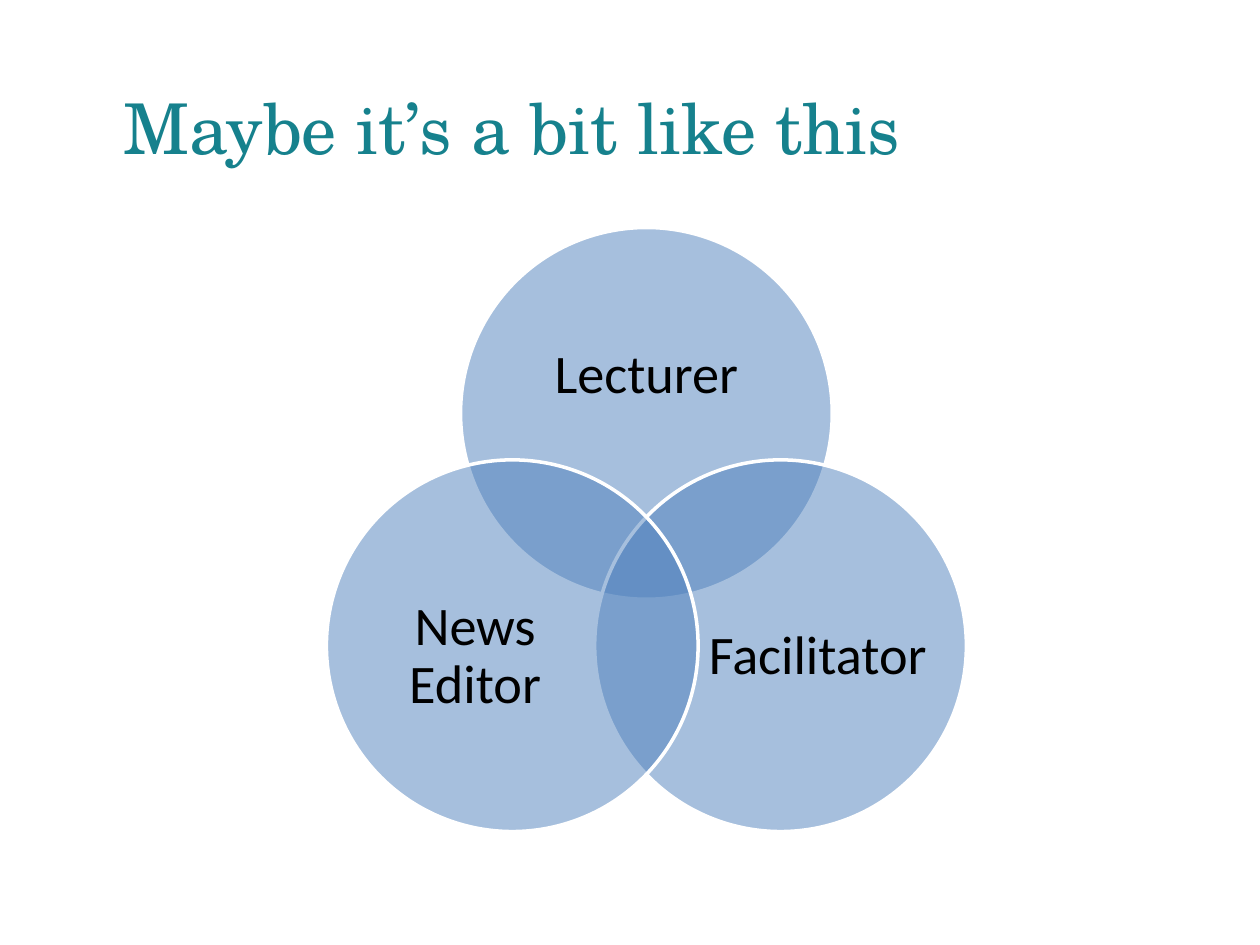
"""Build a slide with a three-circle Venn diagram of roles."""
from math import cos, radians, sin

from lxml import etree
from pptx import Presentation
from pptx.dml.color import RGBColor
from pptx.enum.shapes import MSO_SHAPE
from pptx.enum.text import MSO_ANCHOR, PP_ALIGN
from pptx.oxml.ns import qn
from pptx.util import Inches, Pt

OVAL = MSO_SHAPE.OVAL
TOP, MIDDLE = MSO_ANCHOR.TOP, MSO_ANCHOR.MIDDLE
LEFT, CENTER = PP_ALIGN.LEFT, PP_ALIGN.CENTER
TEAL = RGBColor(0x16, 0x81, 0x8D)
BLUE = RGBColor(0x4F, 0x81, 0xBD)
WHITE = RGBColor(0xFF, 0xFF, 0xFF)
BLACK = RGBColor(0x00, 0x00, 0x00)

WIDTH, HEIGHT = 10, 7.5
CENTER_X, CENTER_Y = 5.13, 4.51
DIAMETER = 2.95
ORBIT = DIAMETER * 5 / 12
ROLES = [
    ("Lecturer", -90, (0, -0.1), (0.73, 0.45)),
    ("Facilitator", 30, (0.1, 0.03), (0.6, 0.55)),
    ("News Editor", 150, (-0.1, 0.03), (0.6, 0.55)),
]


def write(box, text, *, font, size, color, align, anchor, spacing):
    """Put formatted text into a box without margins."""
    frame = box.text_frame
    frame.word_wrap = True
    frame.vertical_anchor = anchor
    frame.margin_left = frame.margin_right = 0
    frame.margin_top = frame.margin_bottom = 0
    para = frame.paragraphs[0]
    para.alignment = align
    para.line_spacing = spacing
    para.space_before = Pt(0)
    span = para.add_run()
    span.text = text
    span.font.name = font
    span.font.size = Pt(size)
    span.font.color.rgb = color


def centered(x, y, width, height):
    """Return left, top, width and height around a centre point in inches."""
    return [Inches(value) for value in (x - width / 2, y - height / 2, width, height)]


class VennSlide:
    """Hold the style and the current slide."""

    title_style = dict(font="TeX Gyre Schola", size=40, color=TEAL,
                       align=LEFT, anchor=TOP, spacing=Pt(42))
    label_style = dict(font="Calibri", size=31, color=BLACK,
                       align=CENTER, anchor=MIDDLE, spacing=0.9)

    def __init__(self, deck):
        """Add a title-only page with a group for the diagram."""
        self.page = deck.slides.add_slide(deck.slide_layouts[5])
        self.diagram = self.page.shapes.add_group_shape()

    def title(self, text):
        """Place and fill the title placeholder."""
        box = self.page.shapes.title
        box.left, box.top = Inches(0.098 * WIDTH), Inches(0.1 * HEIGHT)
        box.width, box.height = Inches(0.713 * WIDTH), Inches(0.095 * HEIGHT)
        write(box, text, **self.title_style)

    def circle(self, x, y):
        """Draw a half-transparent circle around a centre point."""
        shape = self.diagram.shapes.add_shape(OVAL, *centered(x, y, DIAMETER, DIAMETER))
        shape.shadow.inherit = False
        shape.fill.solid()
        shape.fill.fore_color.rgb = BLUE
        color = shape.fill._xPr.find(qn("a:solidFill"))[0]
        etree.SubElement(color, qn("a:alpha")).set("val", "50000")
        shape.line.color.rgb = WHITE
        shape.line.width = Pt(2)

    def label(self, text, x, y, width, height):
        """Write a role name around a centre point."""
        box = self.diagram.shapes.add_textbox(*centered(x, y, width, height))
        write(box, text, **self.label_style)

    def role(self, text, angle, shift, size):
        """Add a circle on the orbit and its label, sized in shares of the diameter."""
        x = CENTER_X + ORBIT * cos(radians(angle))
        y = CENTER_Y + ORBIT * sin(radians(angle))
        self.circle(x, y)
        self.label(text, x + shift[0] * DIAMETER, y + shift[1] * DIAMETER,
                   *(share * DIAMETER for share in size))


def main():
    """Build and save the deck."""
    deck = Presentation()
    deck.slide_width, deck.slide_height = Inches(WIDTH), Inches(HEIGHT)
    slide = VennSlide(deck)
    slide.title("Maybe it’s a bit like this")
    for role in ROLES:
        slide.role(*role)
    deck.save("out.pptx")


if __name__ == "__main__":
    main()
